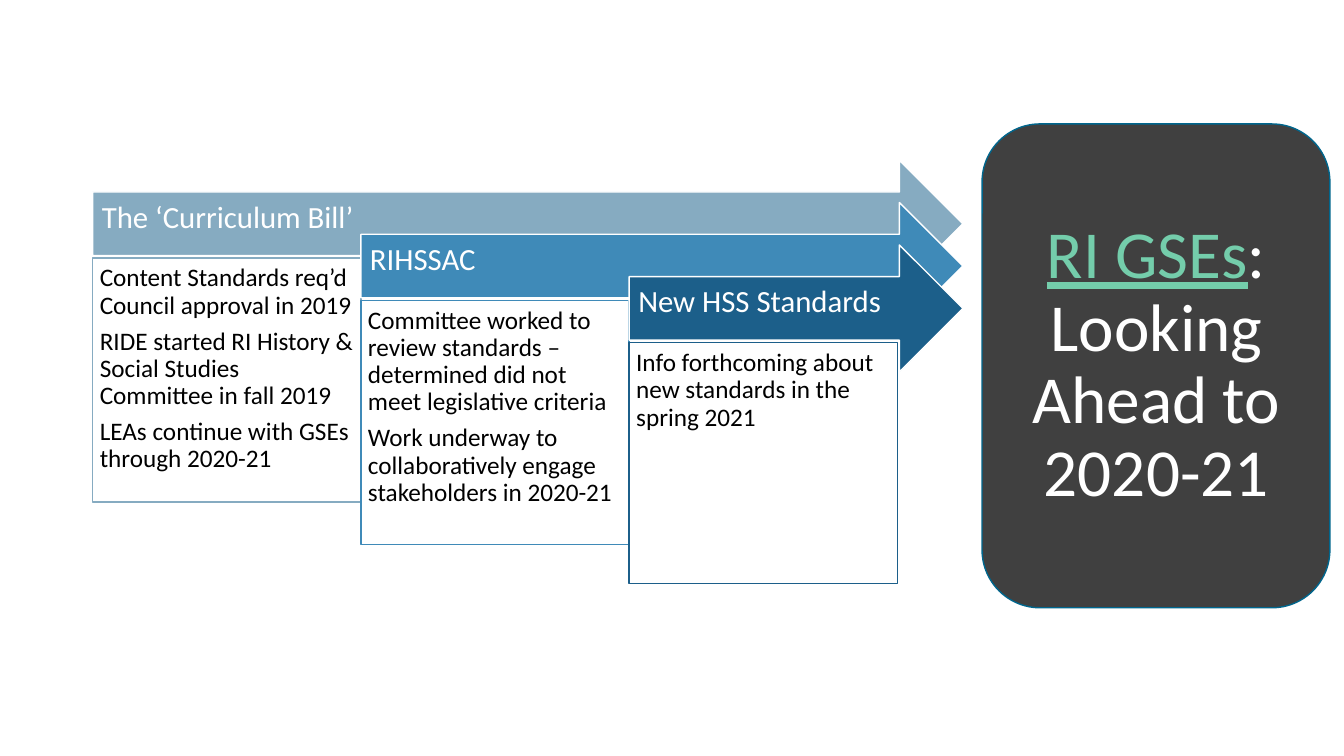
from pptx import Presentation
from pptx.dml.color import RGBColor
from pptx.enum.shapes import MSO_SHAPE
from pptx.enum.text import MSO_ANCHOR, MSO_AUTO_SIZE, PP_ALIGN
from pptx.util import Inches, Pt

ROUNDED, ARROW, RECT = (MSO_SHAPE.ROUNDED_RECTANGLE, MSO_SHAPE.RIGHT_ARROW,
                        MSO_SHAPE.RECTANGLE)
TOP, MIDDLE = MSO_ANCHOR.TOP, MSO_ANCHOR.MIDDLE
LEFT, CENTER = PP_ALIGN.LEFT, PP_ALIGN.CENTER
NO_AUTOFIT = MSO_AUTO_SIZE.NONE

FONT = "Calibri"
COLORS = {
    "white": "FFFFFF", "black": "000000", "panel": "404040",
    "panel_line": "00668D", "link": "74CDAB",
    "bill": "86ABC1", "committee": "3F8AB8", "standards": "1C5F8A",
}

TITLE = [("RI GSEs", "link", True), (": Looking Ahead to 2020-21", "white", False)]
# heading, colour, height of the detail box, details
STAGES = [
    ("The ‘Curriculum Bill’", "bill", 2.42, [
        "Content Standards req’d Council approval in 2019",
        "RIDE started RI History & Social Studies Committee in fall 2019",
        "LEAs continue with GSEs through 2020-21"]),
    ("RIHSSAC", "committee", 2.42, [
        "Committee worked to review standards – determined did not meet "
        "legislative criteria",
        "Work underway to collaboratively engage stakeholders in 2020-21"]),
    ("New HSS Standards", "standards", 2.39, [
        "Info forthcoming about new standards in the spring 2021"]),
]

STAGE_LEFT, STAGE_TOP = 0.92, 1.59
STEP_X, STEP_Y = 2.66, 0.42
ARROW_TIP, ARROW_HEIGHT = 9.55, 1.26
DETAIL_DROP = 0.97


def rgb(name):
    return RGBColor.from_string(COLORS[name])


def add_box(slide, kind, left, top, width, height, fill, line):
    box = slide.shapes.add_shape(kind, Inches(left), Inches(top),
                                 Inches(width), Inches(height))
    box.shadow.inherit = False
    box.fill.solid()
    box.fill.fore_color.rgb = rgb(fill)
    box.line.color.rgb = rgb(line)
    box.line.width = Pt(1)
    return box


def write(shape, paragraphs, *, size, insets, anchor=TOP, align=LEFT, after=0):
    """Fill a shape with paragraphs, each a list of (text, colour, underline)."""
    frame = shape.text_frame
    frame.word_wrap = True
    frame.auto_size = NO_AUTOFIT
    frame.vertical_anchor = anchor
    (frame.margin_left, frame.margin_top,
     frame.margin_right, frame.margin_bottom) = map(Inches, insets)
    for index, runs in enumerate(paragraphs):
        paragraph = frame.add_paragraph() if index else frame.paragraphs[0]
        paragraph.alignment = align
        paragraph.line_spacing = 0.9
        paragraph.space_before = Pt(0)
        paragraph.space_after = Pt(after)
        for text, color, underline in runs:
            run = paragraph.add_run()
            run.text = text
            run.font.name = FONT
            run.font.size = Pt(size)
            run.font.color.rgb = rgb(color)
            run.font.underline = underline


def add_title(slide):
    panel = add_box(slide, ROUNDED, 9.74, 1.23, 3.45, 4.8, "panel", "panel_line")
    title = slide.shapes.title
    title._element.addprevious(panel._element)
    title.left, title.top = Inches(10.05), Inches(0.58)
    title.width, title.height = Inches(2.84), Inches(6.1)
    write(title, [TITLE], size=48, insets=(0.1, 0.05, 0.1, 0.05),
          anchor=MIDDLE, align=CENTER)


def add_stage(slide, index, heading, color, detail_height, details):
    left = STAGE_LEFT + index * STEP_X
    top = STAGE_TOP + index * STEP_Y
    arrow = add_box(slide, ARROW, left, top, ARROW_TIP - left, ARROW_HEIGHT,
                    color, "white")
    write(arrow, [[(heading, "white", False)]], size=22,
          insets=(0.09, 0.09, 0.28, 0.2), anchor=MIDDLE, after=7.7)
    detail = add_box(slide, RECT, left, top + DETAIL_DROP, STEP_X, detail_height,
                     "white", color)
    write(detail, [[(text, "black", False)] for text in details], size=18,
          insets=(0.07, 0.07, 0.07, 0.07), after=6.3)


def main():
    deck = Presentation()
    deck.slide_width, deck.slide_height = Inches(13.33), Inches(7.5)
    slide = deck.slides.add_slide(deck.slide_layouts[5])
    add_title(slide)
    for index, stage in enumerate(STAGES):
        add_stage(slide, index, *stage)
    deck.save("out.pptx")


if __name__ == "__main__":
    main()
